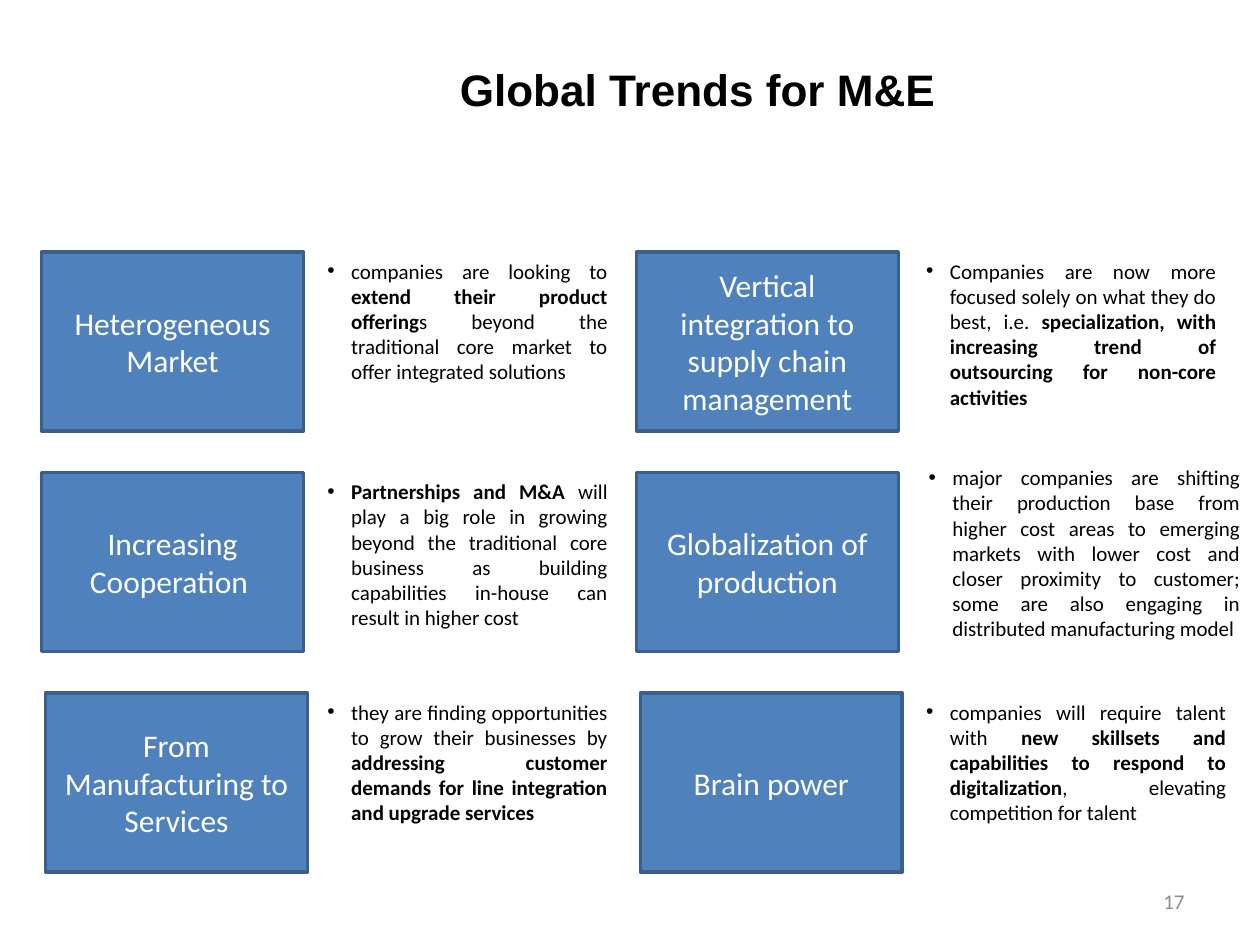
from collections import namedtuple

from lxml.etree import SubElement
from pptx import Presentation
from pptx.dml.color import RGBColor
from pptx.enum.shapes import MSO_SHAPE as Shape
from pptx.enum.text import MSO_ANCHOR as Anchor, MSO_AUTO_SIZE as AutoSize, PP_ALIGN as Align
from pptx.oxml.ns import qn
from pptx.util import Cm, Pt

BLUE = RGBColor(0x4F, 0x81, 0xBD)
DARK_BLUE = RGBColor(0x3A, 0x5F, 0x8C)
WHITE = RGBColor(0xFF, 0xFF, 0xFF)
BLACK = RGBColor(0, 0, 0)
GRAY = RGBColor(0x8C, 0x8C, 0x8C)

TITLE_FONT = {"name": "Arial", "size": Pt(25.2), "bold": True}
LABEL_FONT = {"name": "Calibri", "size": Pt(18)}
BODY_FONT = {"name": "Calibri", "size": Pt(12)}

COLUMNS = (0.84, 12.83)
FIRST_ROW, ROW_STEP = 5.08, 4.445
LABEL_SIZE = (5.28, 3.61)
BULLET_INDENT = Cm(0.48)

Trend = namedtuple("Trend", "label label_shift body_box runs")

TRENDS = (
    (
        Trend("Heterogeneous Market", 0, (5.51, 0, 6.15, 3.33), (
            ("companies are looking to ", False),
            ("extend their product offering", True),
            ("s beyond the traditional core market to offer integrated solutions", False))),
        Trend("Increasing Cooperation ", 0, (5.51, 0, 6.15, 3.33), (
            ("Partnerships and M&A", True),
            (" will play a big role in growing beyond the traditional core business "
             "as building capabilities in-house can result in higher cost", False))),
        Trend("From Manufacturing to Services", 0.08, (5.51, 0, 6.15, 2.82), (
            ("they are finding opportunities to grow their businesses by ", False),
            ("addressing customer demands for line integration and upgrade services", True))),
    ),
    (
        Trend("Vertical integration to supply chain management", 0, (5.59, 0, 6.35, 3.33), (
            ("Companies are now more focused solely on what they do best, i.e. ", False),
            ("specialization, with increasing trend of outsourcing for non-core activities", True))),
        Trend("Globalization of production", 0, (5.64, -0.28, 6.78, 3.84), (
            ("major companies are shifting their production base from higher cost areas to "
             "emerging markets with lower cost and closer proximity to customer; some are "
             "also engaging in distributed manufacturing model", False),)),
        Trend("Brain power", 0.08, (5.59, 0, 6.55, 2.82), (
            ("companies will require talent with ", False),
            ("new skillsets and capabilities to respond to digitalization", True),
            (", elevating competition for talent", False))),
    ),
)


def format_font(font, values, color):
    for attribute, value in values.items():
        setattr(font, attribute, value)
    font.color.rgb = color


def write_line(shape, text, values, color, align):
    frame = shape.text_frame
    frame.word_wrap = True
    frame.vertical_anchor = Anchor.MIDDLE
    paragraph = frame.paragraphs[0]
    paragraph.alignment = align
    run = paragraph.add_run()
    run.text = text
    format_font(run.font, values, color)


def add_title(slide, left, top, width, height):
    title = slide.shapes.title
    title.left, title.top, title.width, title.height = map(Cm, (left, top, width, height))
    write_line(title, "Global Trends for M&E ", TITLE_FONT, BLACK, Align.CENTER)
    title.text_frame.auto_size = AutoSize.NONE


def add_label(slide, left, top, text):
    label = slide.shapes.add_shape(Shape.RECTANGLE, *map(Cm, (left, top, *LABEL_SIZE)))
    label.shadow.inherit = False
    label.fill.solid()
    label.fill.fore_color.rgb = BLUE
    label.line.color.rgb = DARK_BLUE
    label.line.width = Pt(2)
    write_line(label, text, LABEL_FONT, WHITE, Align.CENTER)


def add_body(slide, left, top, width, height, runs):
    box = slide.shapes.add_textbox(*map(Cm, (left, top, width, height)))
    frame = box.text_frame
    frame.word_wrap = True
    frame.auto_size = AutoSize.SHAPE_TO_FIT_TEXT
    paragraph = frame.paragraphs[0]
    paragraph.alignment = Align.JUSTIFY
    properties = paragraph._p.get_or_add_pPr()
    properties.set("marL", str(BULLET_INDENT))
    properties.set("indent", str(-BULLET_INDENT))
    SubElement(properties, qn("a:buFont"), typeface="Arial")
    SubElement(properties, qn("a:buChar"), char="•")
    for text, bold in runs:
        run = paragraph.add_run()
        run.text = text
        format_font(run.font, {**BODY_FONT, "bold": bold}, BLACK)


def add_trend(slide, left, top, trend):
    add_label(slide, left + trend.label_shift, top, trend.label)
    shift_x, shift_y, width, height = trend.body_box
    add_body(slide, left + shift_x, top + shift_y, width, height, trend.runs)


def add_page_number(slide, left, top, width, height):
    box = slide.shapes.add_textbox(*map(Cm, (left, top, width, height)))
    write_line(box, "17", BODY_FONT, GRAY, Align.RIGHT)


def main():
    presentation = Presentation()
    presentation.slide_width, presentation.slide_height = Cm(25.4), Cm(19.05)
    slide = presentation.slides.add_slide(presentation.slide_layouts.get_by_name("Title Only"))
    add_title(slide, 6.58, 1.14, 15.21, 1.3)
    for left, column in zip(COLUMNS, TRENDS):
        for row, trend in enumerate(column):
            add_trend(slide, left, FIRST_ROW + row * ROW_STEP, trend)
    add_page_number(slide, 18.21, 17.65, 5.92, 1.02)
    presentation.save("out.pptx")


if __name__ == "__main__":
    main()
